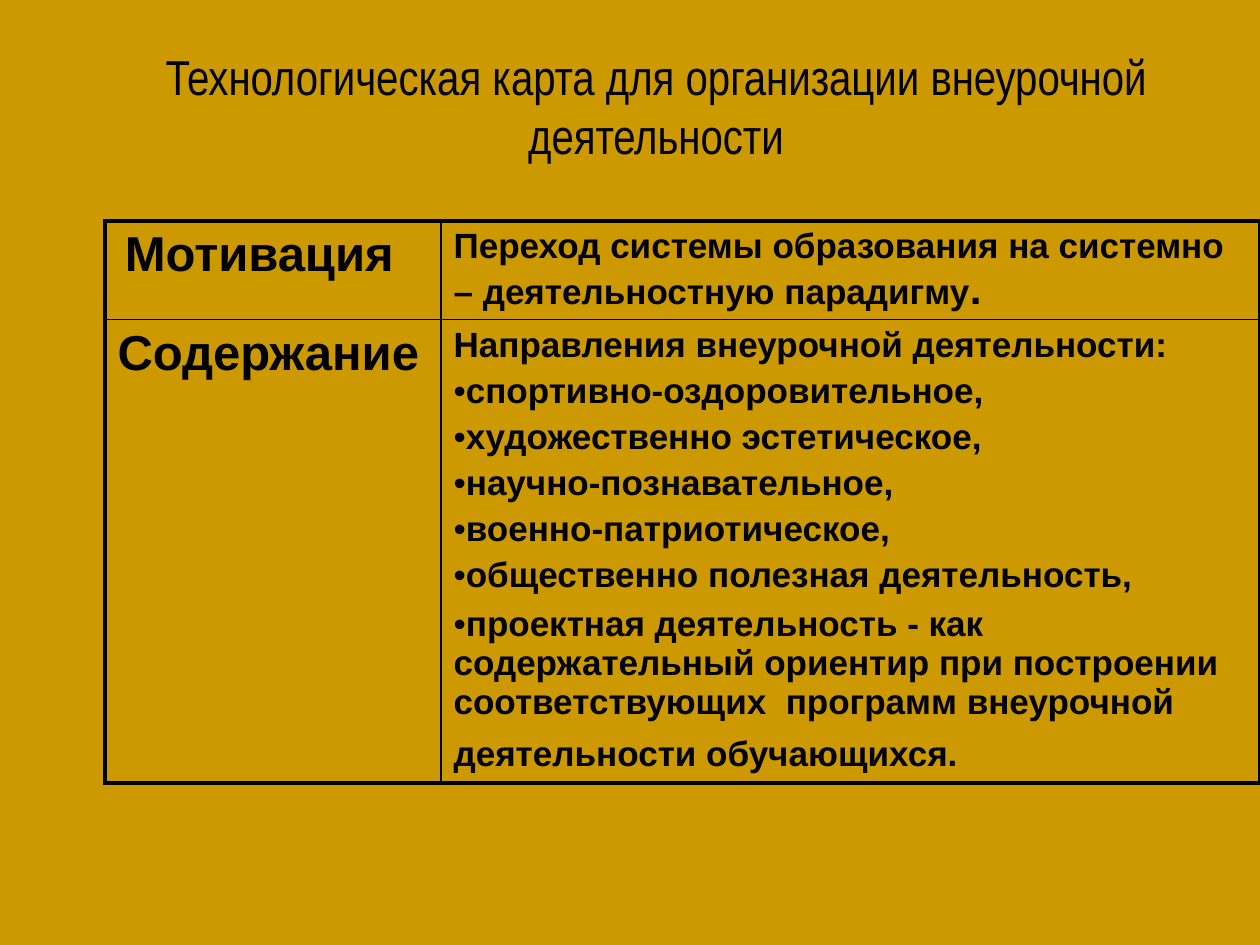
from dataclasses import dataclass

from lxml.etree import SubElement
from pptx import Presentation
from pptx.dml.color import RGBColor
from pptx.enum.text import MSO_ANCHOR, PP_ALIGN
from pptx.oxml.ns import qn
from pptx.util import Emu, Pt

PX = 914400 / 126


def px(length):
    return Emu(round(length * PX))


@dataclass(frozen=True)
class Theme:
    background: RGBColor = RGBColor(0xCC, 0x99, 0x00)
    ink: RGBColor = RGBColor(0, 0, 0)
    title_font: str = "Arial Narrow"
    body_font: str = "Arial"
    heading: float = 28
    accent: float = 24
    body: float = 20
    outer_line: float = 2.25
    inner_line: float = 1


class Deck:
    def __init__(self, theme, width, height):
        self.theme = theme
        self.presentation = Presentation()
        self.presentation.slide_width = px(width)
        self.presentation.slide_height = px(height)
        self.slide = None

    def add_slide(self):
        self.slide = self.presentation.slides.add_slide(self.presentation.slide_layouts[5])
        fill = self.slide.background.fill
        fill.solid()
        fill.fore_color.rgb = self.theme.background

    def style(self, font, name, size=None, bold=False):
        font.name, font.bold = name, bold
        font.color.rgb = self.theme.ink
        if size:
            font.size = Pt(size)

    def title(self, text, left, top, width, height):
        heading = self.slide.shapes.title
        heading.left, heading.top = px(left), px(top)
        heading.width, heading.height = px(width), px(height)
        frame = heading.text_frame
        frame.text = text
        frame.word_wrap = True
        frame.vertical_anchor = MSO_ANCHOR.MIDDLE
        paragraph = frame.paragraphs[0]
        paragraph.alignment = PP_ALIGN.CENTER
        self.style(paragraph.font, self.theme.title_font, self.theme.heading)

    def table(self, left, top, columns, rows):
        grid = self.slide.shapes.add_table(
            len(rows), len(columns), px(left), px(top), px(sum(columns)), px(sum(rows))
        ).table
        grid.first_row = grid.horz_banding = False
        for column, width in zip(grid.columns, columns):
            column.width = px(width)
        for row, height in zip(grid.rows, rows):
            row.height = px(height)
        for r in range(len(rows)):
            for c in range(len(columns)):
                cell = grid.cell(r, c)
                self.borders(cell, L=c == 0, R=c == len(columns) - 1,
                             T=r == 0, B=r == len(rows) - 1)
                cell.fill.background()
        return grid

    def borders(self, cell, **outer_sides):
        """Draw each side, thick where the flag marks the table's outer edge."""
        properties = cell._tc.get_or_add_tcPr()
        for side, outer in outer_sides.items():
            width = self.theme.outer_line if outer else self.theme.inner_line
            line = SubElement(properties, qn(f"a:ln{side}"), w=str(Pt(width)))
            colour = SubElement(line, qn("a:solidFill"))
            SubElement(colour, qn("a:srgbClr"), val=str(self.theme.ink))

    def paragraph(self, cell, *runs, bullet=False, before=0):
        """Fill the cell's empty first paragraph or add one; runs are (text, size)."""
        frame = cell.text_frame
        paragraph = frame.paragraphs[0] if not frame.text else frame.add_paragraph()
        if before:
            paragraph.space_before = Pt(before)
        if bullet:
            properties = paragraph._p.get_or_add_pPr()
            SubElement(properties, qn("a:buFont"), typeface=self.theme.body_font)
            SubElement(properties, qn("a:buChar"), char="•")
        sizes = {size for _, size in runs}
        shared_size = sizes.pop() if len(sizes) == 1 else None
        self.style(paragraph.font, self.theme.body_font, shared_size, bold=True)
        for text, size in runs:
            run = paragraph.add_run()
            run.text = text
            if not shared_size:
                run.font.size = Pt(size)
        return paragraph


DIRECTIONS = [
    "спортивно-оздоровительное,",
    "художественно эстетическое,",
    "научно-познавательное,",
    "военно-патриотическое,",
    "общественно полезная деятельность,",
]
PROJECT_WORK = (
    "проектная деятельность - как содержательный ориентир при построении "
    "соответствующих  программ внеурочной деятельности обучающихся."
)


def main():
    theme = Theme()
    deck = Deck(theme, 1260, 945)
    deck.add_slide()
    deck.title("Технологическая карта для организации внеурочной деятельности",
               105, 42, 1102, 126)
    card = deck.table(105, 221, columns=[336, 819], rows=[98, 463])

    motivation = card.cell(0, 0)
    motivation.margin_right = px(40)
    deck.paragraph(motivation, ("Мотивация", theme.heading)).alignment = PP_ALIGN.CENTER
    deck.paragraph(
        card.cell(0, 1),
        ("Переход системы образования на системно – деятельностную парадигму", theme.body),
        (".", theme.accent),
    )
    deck.paragraph(card.cell(1, 0), ("Содержание", theme.heading))

    content = card.cell(1, 1)
    deck.paragraph(content, ("Направления внеурочной деятельности:", theme.body))
    for direction in DIRECTIONS:
        deck.paragraph(content, (direction, theme.body), bullet=True, before=theme.body / 5)
    deck.paragraph(content, (PROJECT_WORK, theme.body), (" ", theme.heading),
                   bullet=True, before=theme.heading / 5)

    deck.presentation.save("out.pptx")


if __name__ == "__main__":
    main()
